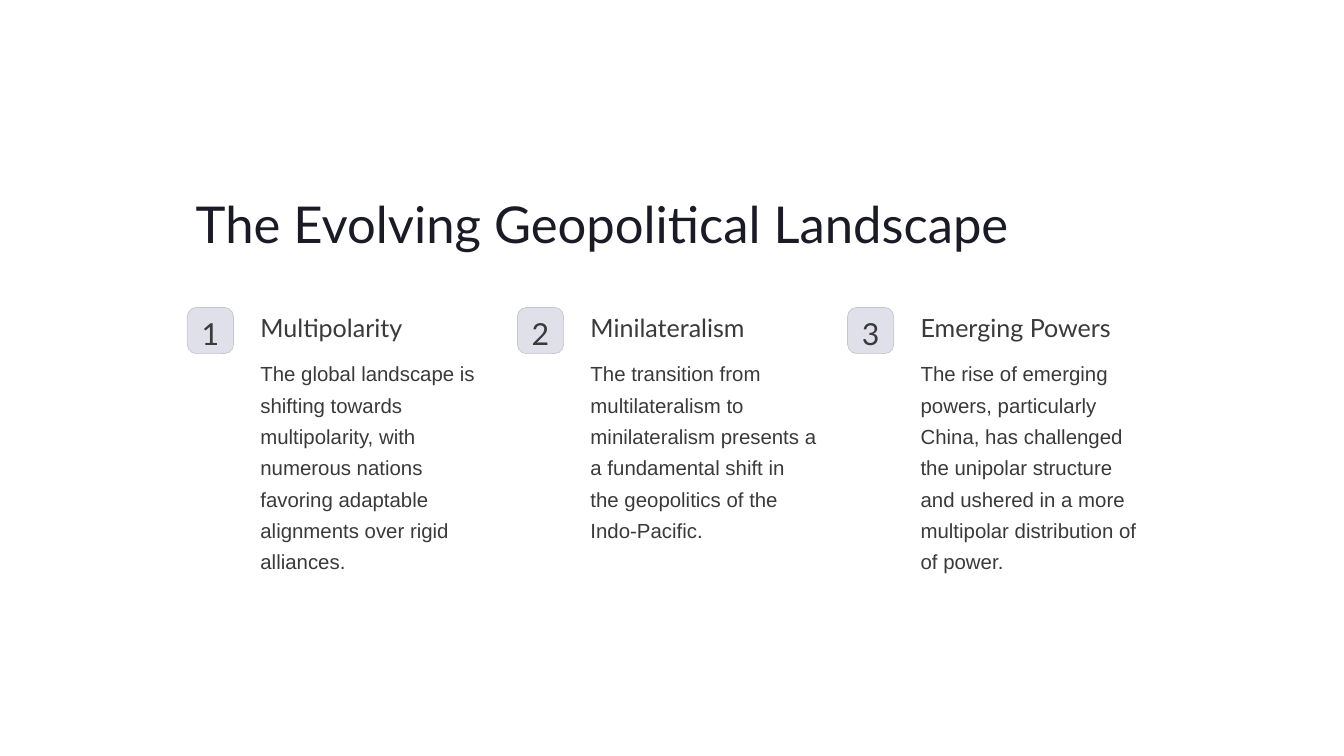
from pptx import Presentation
from pptx.dml.color import RGBColor
from pptx.enum.shapes import MSO_SHAPE
from pptx.enum.text import MSO_ANCHOR, MSO_AUTO_SIZE, PP_ALIGN
from pptx.util import Inches, Pt

COLORS = {"title": "1B1B27", "text": "3B3939", "badge": "E0E0EA", "outline": "C6C6D0"}
LEFT, TOP, PITCH = 2.23, 3.66, 3.93
BADGE_SIZE, TEXT_OFFSET, TEXT_WIDTH = 0.55, 0.87, 2.7

COLUMNS = [
    ("Multipolarity",
     "The global landscape is shifting towards multipolarity, with numerous nations "
     "favoring adaptable alignments over rigid alliances."),
    ("Minilateralism",
     "The transition from multilateralism to minilateralism presents a a fundamental "
     "shift in the geopolitics of the Indo-Pacific."),
    ("Emerging Powers",
     "The rise of emerging powers, particularly China, has challenged the unipolar "
     "structure and ushered in a more multipolar distribution of of power."),
]


def write(paragraph, text, font="Lato", size=21.5, color="text",
          align=PP_ALIGN.LEFT, before=0, spacing=1.0):
    paragraph.text = text
    paragraph.alignment = align
    paragraph.space_before = Pt(before)
    paragraph.line_spacing = spacing
    paragraph.font.name = font
    paragraph.font.size = Pt(size)
    paragraph.font.color.rgb = RGBColor.from_string(COLORS[color])


def prepare(shape, inset_top, anchor=MSO_ANCHOR.TOP):
    frame = shape.text_frame
    frame.word_wrap = True
    frame.auto_size = MSO_AUTO_SIZE.NONE
    frame.vertical_anchor = anchor
    frame.margin_left = frame.margin_right = frame.margin_bottom = 0
    frame.margin_top = Inches(inset_top)
    return frame


presentation = Presentation()
presentation.slide_width = Inches(16)
presentation.slide_height = Inches(9)
slide = presentation.slides.add_slide(presentation.slide_layouts[5])

title = slide.shapes.title
title.left, title.top = Inches(2.33), Inches(2.08)
title.width, title.height = Inches(11.36), Inches(1.52)
write(prepare(title, 0.22).paragraphs[0], "The Evolving Geopolitical Landscape",
      size=43.5, color="title")

for index, (heading, description) in enumerate(COLUMNS):
    left = LEFT + index * PITCH

    badge = slide.shapes.add_shape(
        MSO_SHAPE.ROUNDED_RECTANGLE, Inches(left), Inches(TOP),
        Inches(BADGE_SIZE), Inches(BADGE_SIZE))
    badge.adjustments[0] = 0.2
    badge.shadow.inherit = False
    badge.fill.solid()
    badge.fill.fore_color.rgb = RGBColor.from_string(COLORS["badge"])
    badge.line.color.rgb = RGBColor.from_string(COLORS["outline"])
    badge.line.width = Pt(0.6)
    write(prepare(badge, 0.07, MSO_ANCHOR.MIDDLE).paragraphs[0], str(index + 1),
          size=26, align=PP_ALIGN.CENTER)

    column = slide.shapes.add_textbox(
        Inches(left + TEXT_OFFSET), Inches(TOP + 0.02), Inches(TEXT_WIDTH), Inches(3.06))
    frame = prepare(column, 0.04)
    write(frame.paragraphs[0], heading)
    write(frame.add_paragraph(), description, font="Arial", size=17.5,
          before=10.3, spacing=1.28)

presentation.save("out.pptx")
